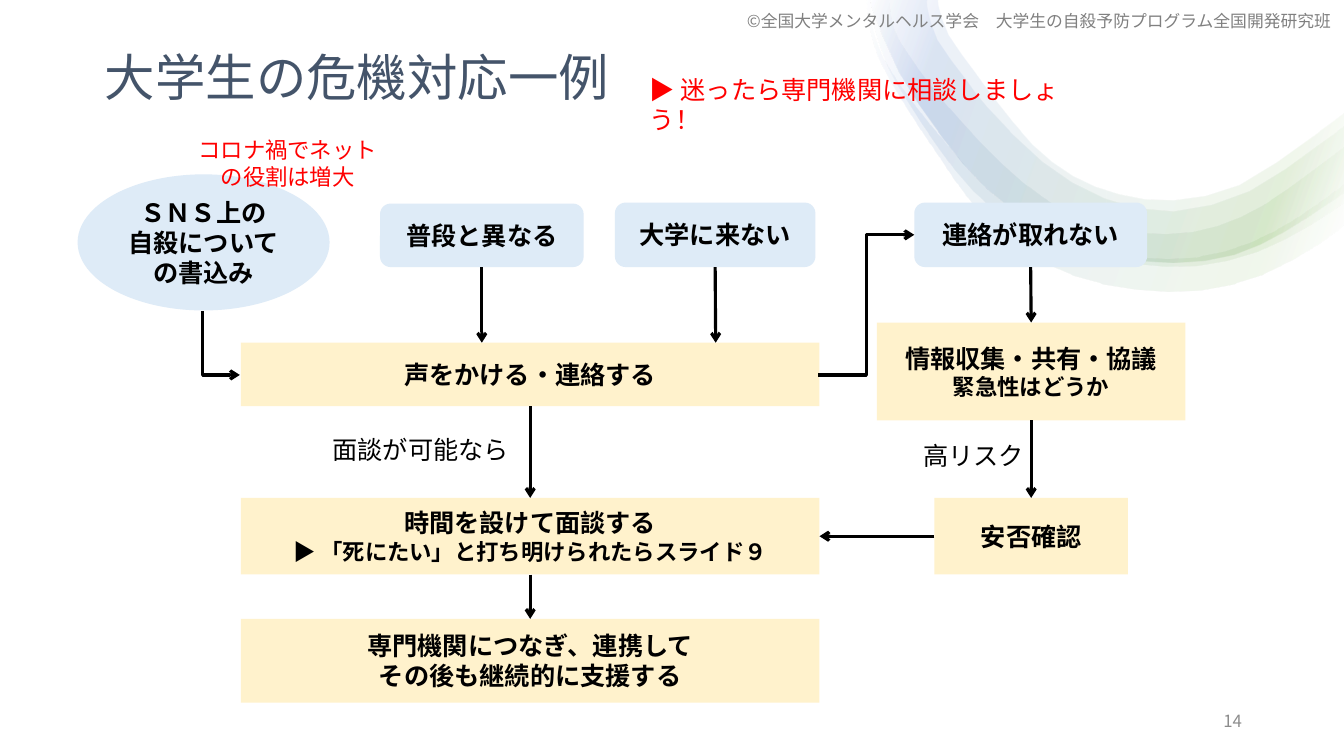
from lxml.etree import SubElement
from pptx import Presentation
from pptx.dml.color import RGBColor
from pptx.enum.shapes import MSO_CONNECTOR, MSO_SHAPE
from pptx.enum.text import MSO_ANCHOR, PP_ALIGN
from pptx.oxml.ns import qn
from pptx.util import Inches, Pt

FONT = "Noto Sans CJK JP"
WIDE, HIGH = 40 / 3, 7.5
BLUE, CREAM, RED, WHITE = "DEEBF7", "FFF2CC", "FF0000", "FFFFFF"
LEFT, CENTER, RIGHT = PP_ALIGN.LEFT, PP_ALIGN.CENTER, PP_ALIGN.RIGHT
TOP, MIDDLE = MSO_ANCHOR.TOP, MSO_ANCHOR.MIDDLE
RECT, ROUND, OVAL = (MSO_SHAPE.RECTANGLE, MSO_SHAPE.ROUNDED_RECTANGLE,
                     MSO_SHAPE.OVAL)

# Each ribbon: points along its lower edge, then along its upper edge
RIBBONS = [
    ([(8.6, 0), (8.61, .14), (8.71, .56), (8.99, 1.06), (9.31, 1.54),
      (9.65, 2.02), (10.09, 2.44), (10.65, 2.73), (11.27, 2.87), (11.91, 2.88),
      (12.53, 2.72), (13.08, 2.42), (13.33, 2.23)],
     [(13.33, 1.83), (12.88, 2.15), (12.39, 2.41), (11.86, 2.55), (11.3, 2.55),
      (10.76, 2.45), (10.25, 2.22), (9.81, 1.89), (9.43, 1.47), (9.06, 1.02),
      (8.78, .6), (8.66, .27), (8.64, 0)]),
    ([(8.65, 0), (8.67, .24), (8.8, .64), (9.01, 1.01), (9.31, 1.46),
      (9.66, 1.9), (10.13, 2.27), (10.69, 2.5), (11.27, 2.62), (11.87, 2.64),
      (12.47, 2.5), (13, 2.23), (13.33, 2.01)],
     [(13.33, 1.46), (12.75, 1.89), (12.31, 2.15), (11.83, 2.3), (11.31, 2.31),
      (10.8, 2.2), (10.35, 1.96), (9.96, 1.64), (9.55, 1.22), (9.24, .85),
      (8.94, .43), (8.85, .2), (8.83, 0)]),
]
EDGE = [(8.65, 0), (8.65, .08), (8.92, .72), (9.34, 1.35), (9.79, 1.87),
        (10.35, 2.28), (10.95, 2.52), (11.64, 2.6), (12.24, 2.52),
        (12.74, 2.29), (13.19, 2), (13.33, 1.9)]
RIBBONS += [
    (EDGE, [(13.33, 1.25), (13.05, 1.45), (12.39, 1.89), (11.64, 2.09),
            (10.95, 1.96), (10.34, 1.6), (9.79, 1.06), (9.59, .8),
            (9.3, .4), (9.2, .08), (9.2, 0)]),
    (EDGE, [(13.33, 1.12), (12.99, 1.37), (12.29, 1.83), (11.64, 1.98),
            (11.1, 1.92), (10.64, 1.74), (10.24, 1.43), (9.88, 1),
            (9.68, .73), (9.41, .35), (9.31, .06), (9.31, 0)]),
]


def color(code):
    return RGBColor.from_string(code)


def write(frame, lines, size=18, ink="000000", bold=False, align=LEFT,
          anchor=TOP, space=None):
    """Fill a frame; a line is a string or a (string, size) pair."""
    frame.word_wrap = True
    frame.vertical_anchor = anchor
    for i, line in enumerate(lines):
        words, points = (line, size) if isinstance(line, str) else line
        para = frame.paragraphs[0] if i == 0 else frame.add_paragraph()
        para.alignment = align
        para.line_spacing = space
        run = para.add_run()
        run.text = words
        font = run.font
        font.name, font.size, font.bold = FONT, Pt(points), bold
        font.color.rgb = color(ink)
        SubElement(font._element, qn("a:ea")).set("typeface", FONT)


def label(slide, box, *lines, **style):
    text = slide.shapes.add_textbox(*map(Inches, box))
    write(text.text_frame, lines, **style)


def node(slide, kind, fill, box, *lines):
    shape = slide.shapes.add_shape(kind, *map(Inches, box))
    shape.shadow.inherit = False
    shape.fill.solid()
    shape.fill.fore_color.rgb = color(fill)
    shape.line.fill.background()
    write(shape.text_frame, lines, bold=True, align=CENTER, anchor=MIDDLE)
    return shape


def arrow(slide, start, end, kind=MSO_CONNECTOR.STRAIGHT):
    """Draw an arrow; an end is an (x, y) point or a (shape, side) pair."""
    free = [p if isinstance(p[0], (int, float)) else (0, 0)
            for p in (start, end)]
    line = slide.shapes.add_connector(kind, *map(Inches, free[0] + free[1]))
    if free[0] != start:
        line.begin_connect(*start)
    if free[1] != end:
        line.end_connect(*end)
    line.line.color.rgb = color("000000")
    line.line.width = Pt(2.25)
    SubElement(line.line._get_or_add_ln(), qn("a:tailEnd")).set("type", "arrow")
    SubElement(line._element.spPr, qn("a:effectLst"))
    return line


def smooth(points, steps=2):
    """Run a Catmull-Rom curve through the points."""
    pads = [points[0], *points, points[-1]]
    curve = [points[0]]
    for a, b, c, d in zip(pads, pads[1:], pads[2:], pads[3:]):
        for n in range(1, steps + 1):
            t = n / steps
            curve.append(tuple(
                (2 * q + (r - p) * t + (2 * p - 5 * q + 4 * r - s) * t ** 2
                 + (3 * q - p - 3 * r + s) * t ** 3) / 2
                for p, q, r, s in zip(a, b, c, d)))
    return curve


def waves(slide, box):
    """White ground with translucent ribbons."""
    left, top = box[:2]
    node(slide, RECT, WHITE, box)
    for lower, upper in RIBBONS:
        dots = [((left + x) * 1000, (top + y) * 1000)
                for x, y in smooth(lower) + smooth(upper)]
        pen = slide.shapes.build_freeform(*dots[0], scale=Inches(1) / 1000)
        pen.add_line_segments(dots[1:])
        shape = pen.convert_to_shape()
        shape.shadow.inherit = False
        shape.line.fill.background()
        shape.fill.gradient()
        grad = shape._element.spPr.find(qn("a:gradFill"))
        for child in list(grad):
            grad.remove(child)
        stops = SubElement(grad, qn("a:gsLst"))
        for spot, code in ((2, WHITE), (16, "70AD47"),
                           (85, "4472C4"), (100, WHITE)):
            stop = SubElement(stops, qn("a:gs"), pos=str(spot * 1000))
            tint = SubElement(stop, qn("a:srgbClr"), val=code)
            SubElement(tint, qn("a:alpha"), val="10000")
        SubElement(grad, qn("a:lin"), ang=str(200 * 60000), scaled="0")


def header(slide, box):
    left, top, wide, high = box
    title = slide.shapes.title
    title.left, title.top, title.width, title.height = map(Inches, box)
    write(title.text_frame, ["大学生の危機対応一例"], size=36, ink="44546A",
          space=.9)
    # Bring the title in front of the ground
    slide.shapes._spTree.append(title._element)
    label(slide, (left + 5.41, top + .21, 4.4, .4),
          "▶ 迷ったら専門機関に相談しましょう！", ink=RED)


def flow(slide, box):
    """Main column of steps, with the signs that lead into it."""
    left, top, wide = box
    mid = left + wide / 2

    # Signs
    sns = node(slide, OVAL, BLUE, (left - 1.62, top - 1.67, 2.5, 1.35),
               "ＳＮＳ上の", "自殺についての書込み")
    odd = node(slide, ROUND, BLUE, (left + 1.38, top - 1.38, 2.02, .63),
               "普段と異なる")
    away = node(slide, ROUND, BLUE, (left + 3.71, top - 1.39, 1.99, .64),
                "大学に来ない")
    label(slide, (left - .7, top - 2.1, 2.33, .64),
          "コロナ禍でネット", "の役割は増大", size=16, ink=RED, align=CENTER)

    # Steps
    call = node(slide, RECT, CREAM, (left, top, wide, .63),
                "声をかける・連絡する")
    meet = node(slide, RECT, CREAM, (left, top + 1.54, wide, .76),
                "時間を設けて面談する",
                ("▶ 「死にたい」と打ち明けられたらスライド９", 16))
    care = node(slide, RECT, CREAM, (left, top + 2.74, wide, .83),
                "専門機関につなぎ、連携して", "その後も継続的に支援する")
    label(slide, (mid - 2.06, top + .86, 1.96, .4), "面談が可能なら")

    # Arrows
    arrow(slide, (odd, 2), (left + 2.39, top))
    arrow(slide, (away, 2), (left + 4.71, top))
    arrow(slide, (call, 2), (meet, 0))
    arrow(slide, (meet, 2), (care, 0))
    bend = arrow(slide, (left - .51, top - .18), (left + .12, top + .19),
                 MSO_CONNECTOR.ELBOW)
    bend._element.spPr.find(qn("a:prstGeom")).set("prst", "bentConnector2")
    turn = bend._element.spPr.find(qn("a:xfrm"))
    turn.set("rot", str(270 * 60000))
    turn.set("flipH", "1")
    return meet


def risk(slide, box, meet):
    """Right column for students who cannot be reached."""
    left, top, wide = box
    mid = left + wide / 2
    lost = node(slide, ROUND, BLUE, (mid - 1.16, top, 2.31, .64),
                "連絡が取れない")
    share = node(slide, RECT, CREAM, (left, top + 1.19, wide, .97),
                 "情報収集・共有・協議", ("緊急性はどうか", 16))
    check = node(slide, RECT, CREAM, (mid - .96, top + 2.93, 1.92, .76),
                 "安否確認")
    label(slide, (mid - 1.17, top + 2.31, 1.25, .4), "高リスク")
    arrow(slide, (lost, 2), (share, 0))
    arrow(slide, (share, 2), (check, 0))
    arrow(slide, (check, 1), (meet, 3))
    arrow(slide, (left - .58, top + 1.71), (mid - 1.16, top + .32),
          MSO_CONNECTOR.ELBOW)


def main():
    deck = Presentation()
    deck.slide_width, deck.slide_height = Inches(WIDE), Inches(HIGH)
    slide = deck.slides.add_slide(deck.slide_layouts[5])
    waves(slide, (0, 0, WIDE, HIGH))
    header(slide, (.94, .48, 10.75, 1.17))
    meet = flow(slide, (2.39, 3.4, 5.74))
    risk(slide, (8.7, 2.01, 3.06), meet)

    # Page number and credit
    label(slide, (9.42, 6.95, 3, .4), "14", size=12, ink="8C8C8C",
          align=RIGHT, anchor=MIDDLE)
    label(slide, (7.29, .01, 6.04, .4),
          "©全国大学メンタルヘルス学会　大学生の自殺予防プログラム全国開発研究班",
          size=12, ink="808080", align=CENTER, anchor=MIDDLE)
    deck.save("out.pptx")


if __name__ == "__main__":
    main()
